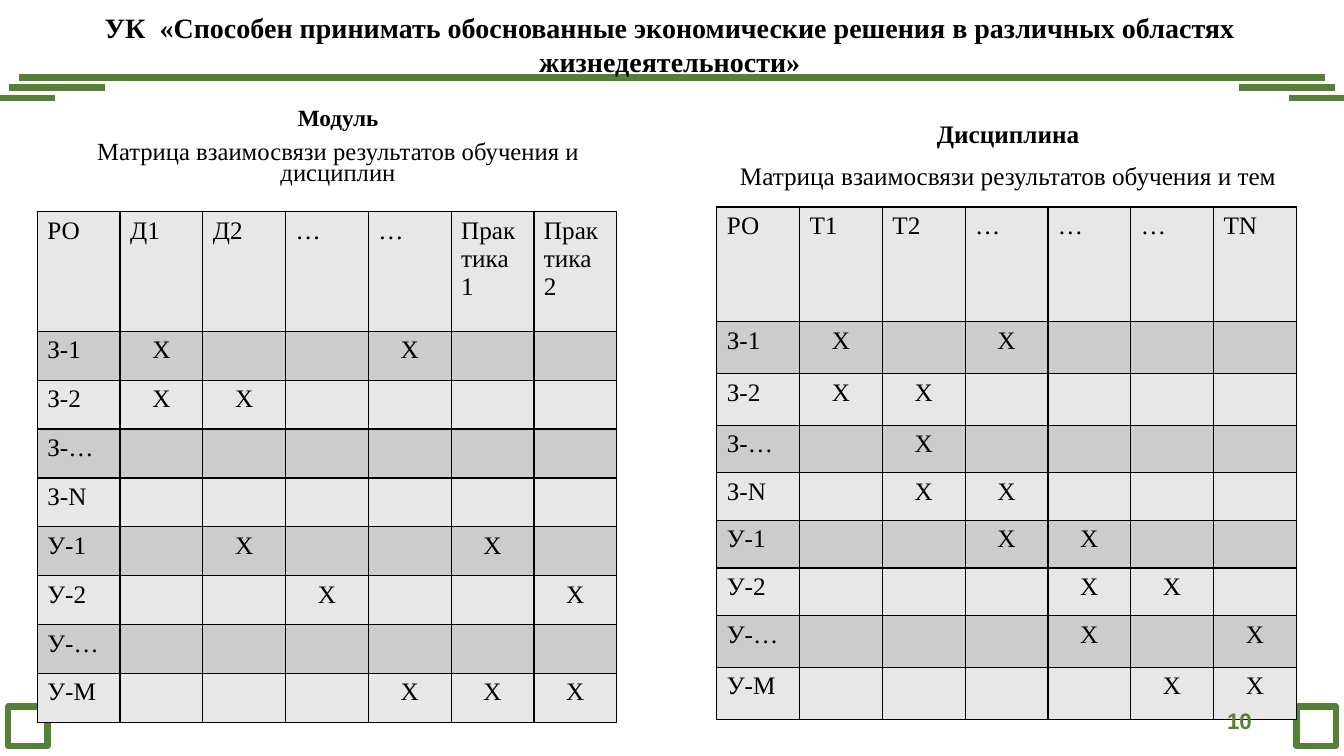
from dataclasses import dataclass

from lxml.etree import SubElement
from pptx import Presentation
from pptx.dml.color import RGBColor
from pptx.enum.shapes import MSO_CONNECTOR, MSO_SHAPE
from pptx.enum.text import MSO_ANCHOR, MSO_AUTO_SIZE, PP_ALIGN
from pptx.oxml import parse_xml
from pptx.oxml.ns import nsdecls, qn
from pptx.util import Pt


@dataclass(frozen=True)
class Theme:
    green: RGBColor = RGBColor(0x54, 0x82, 0x35)
    black: RGBColor = RGBColor(0, 0, 0)
    white: RGBColor = RGBColor(255, 255, 255)
    light_row: RGBColor = RGBColor(0xE7, 0xE7, 0xE7)
    dark_row: RGBColor = RGBColor(0xCC, 0xCC, 0xCC)
    text_font: str = "Times New Roman"
    number_font: str = "Arial"
    title_size: float = 20
    text_size: float = 18
    module_heading_size: float = 16.6
    module_caption_size: float = 17.6
    number_size: float = 16
    rule_width: float = 4.5


THEME = Theme()
SLIDE_WIDTH, SLIDE_HEIGHT = 960, 540
COLUMN_WIDTH = 59.14
MARK = "Х"
OUTCOMES = ["З-1", "З-2", "З-…", "З-N", "У-1", "У-2", "У-…", "У-M"]
MODULE_HEADER = ["РО", "Д1", "Д2", "…", "…", "Практика 1", "Практика 2"]
MODULE_MARKS = [(1, 4), (1, 2), (), (), (2, 5), (3, 6), (), (4, 5, 6)]
MODULE_HEIGHTS = [85.5] + [34.9] * 8
TOPIC_HEADER = ["РО", "Т1", "Т2", "…", "…", "…", "ТN"]
TOPIC_MARKS = [(1, 3), (1, 2), (2,), (2, 3), (3, 4), (4, 5), (4, 6), (5, 6)]
TOPIC_HEIGHTS = [82, 37, 37, 34, 34, 34, 34, 37, 37]


def style_font(font, size, bold=False, color=THEME.black, name=THEME.text_font):
    font.name = name
    font.size = Pt(size)
    font.bold = bold
    font.color.rgb = color


def add_rule(slide, left, right, top):
    rule = slide.shapes.add_connector(
        MSO_CONNECTOR.STRAIGHT, Pt(left), Pt(top), Pt(right), Pt(top)
    )
    rule.line.color.rgb = THEME.green
    rule.line.width = Pt(THEME.rule_width)
    SubElement(rule.element.spPr, qn("a:effectLst"))


def add_corner_square(slide, left):
    square = slide.shapes.add_shape(
        MSO_SHAPE.RECTANGLE, Pt(left), Pt(504.7), Pt(28.2), Pt(28.2)
    )
    square.shadow.inherit = False
    square.fill.solid()
    square.fill.fore_color.rgb = THEME.white
    square.line.color.rgb = THEME.green
    square.line.width = Pt(THEME.rule_width)


def add_frame(slide):
    add_rule(slide, 13.7, SLIDE_WIDTH - 13.7, 55.4)
    for left, right, top in [(6.5, 74.9, 62.6), (0, 39.5, 69.8)]:
        add_rule(slide, left, right, top)
        add_rule(slide, SLIDE_WIDTH - right, SLIDE_WIDTH - left, top)
    for left in (5.8, 926):
        add_corner_square(slide, left)


def fill_placeholder(placeholder, box, anchor, lines, line_spacing, space_before):
    tree = placeholder.element.getparent()
    tree.append(placeholder.element)
    placeholder.left, placeholder.top, placeholder.width, placeholder.height = map(Pt, box)
    frame = placeholder.text_frame
    frame.text = "\n".join(text for text, size, bold in lines)
    frame.auto_size = MSO_AUTO_SIZE.NONE
    frame.word_wrap = True
    frame.vertical_anchor = anchor
    for paragraph, (text, size, bold) in zip(frame.paragraphs, lines):
        paragraph.alignment = PP_ALIGN.CENTER
        paragraph.line_spacing = line_spacing
        paragraph.space_before = Pt(space_before)
        style_font(paragraph.font, size, bold)


def set_borders(cell):
    properties = cell._tc.get_or_add_tcPr()
    for position, side in enumerate(("lnL", "lnR", "lnT", "lnB")):
        border = parse_xml(
            f'<a:{side} {nsdecls("a")} w="{Pt(1)}"><a:solidFill>'
            f'<a:srgbClr val="{THEME.black}"/></a:solidFill></a:{side}>'
        )
        properties.insert(position, border)


def add_matrix(slide, left, top, header, marks, heights):
    rows = [header]
    for outcome, marked in zip(OUTCOMES, marks):
        rows.append([outcome] + [MARK if column in marked else "" for column in range(1, len(header))])
    table = slide.shapes.add_table(
        len(rows), len(header), Pt(left), Pt(top),
        Pt(COLUMN_WIDTH * len(header)), Pt(sum(heights)),
    ).table
    table.first_row = False
    table.horz_banding = False
    for column in table.columns:
        column.width = Pt(COLUMN_WIDTH)
    for row_index, (values, height) in enumerate(zip(rows, heights)):
        table.rows[row_index].height = Pt(height)
        for column_index, value in enumerate(values):
            cell = table.cell(row_index, column_index)
            cell.text = value
            cell.fill.solid()
            cell.fill.fore_color.rgb = THEME.dark_row if row_index % 2 else THEME.light_row
            set_borders(cell)
            paragraph = cell.text_frame.paragraphs[0]
            style_font(paragraph.font, THEME.text_size)
            if value == MARK:
                paragraph.alignment = PP_ALIGN.CENTER


def add_slide_number(slide, number):
    box = slide.shapes.add_textbox(Pt(678.2), Pt(500.4), Pt(216), Pt(28.8))
    frame = box.text_frame
    frame.word_wrap = True
    frame.vertical_anchor = MSO_ANCHOR.MIDDLE
    frame.margin_left = frame.margin_right = frame.margin_top = frame.margin_bottom = 0
    frame.text = number
    paragraph = frame.paragraphs[0]
    paragraph.alignment = PP_ALIGN.RIGHT
    style_font(paragraph.font, THEME.number_size, True, THEME.green, THEME.number_font)


def main():
    presentation = Presentation()
    presentation.slide_width = Pt(SLIDE_WIDTH)
    presentation.slide_height = Pt(SLIDE_HEIGHT)
    slide = presentation.slides.add_slide(presentation.slide_layouts.get_by_name("Comparison"))
    title, module_heading, module_content, topic_heading, topic_content = slide.placeholders
    for unused in (module_content, topic_content):
        unused.element.getparent().remove(unused.element)

    add_frame(slide)
    fill_placeholder(
        title, (10, 7.2, 937, 49), MSO_ANCHOR.MIDDLE,
        [("УК  «Способен принимать обоснованные экономические решения в различных областях "
          "жизнедеятельности»", THEME.title_size, True)],
        1, 0,
    )
    fill_placeholder(
        module_heading, (44.6, 72.7, 393.8, 63.4), MSO_ANCHOR.BOTTOM,
        [("Модуль", THEME.module_heading_size, True),
         ("Матрица взаимосвязи результатов обучения и дисциплин", THEME.module_caption_size, False)],
        0.7, 10,
    )
    add_matrix(slide, 26.6, 151.2, MODULE_HEADER, MODULE_MARKS, MODULE_HEIGHTS)
    fill_placeholder(
        topic_heading, (513.4, 70.6, 413.3, 69.1), MSO_ANCHOR.BOTTOM,
        [("Дисциплина", THEME.text_size, True),
         ("Матрица взаимосвязи результатов обучения и тем", THEME.text_size, False)],
        0.9, 10,
    )
    add_matrix(slide, 512, 147.8, TOPIC_HEADER, TOPIC_MARKS, TOPIC_HEIGHTS)
    add_slide_number(slide, "10")
    presentation.save("out.pptx")


if __name__ == "__main__":
    main()
